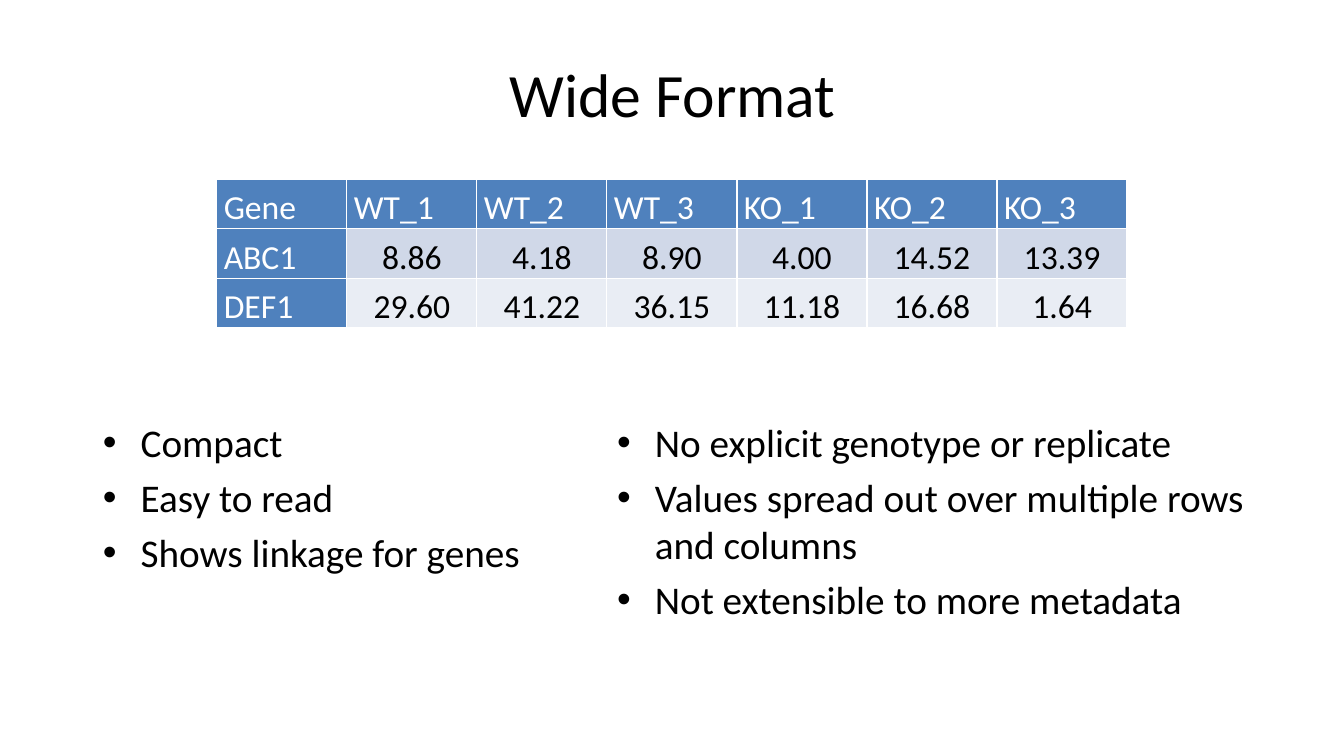
import dataclasses

import pptx
import pptx.dml.color
import pptx.enum.text
import pptx.oxml
import pptx.oxml.ns
import pptx.util
from pptx.util import Inches


@dataclasses.dataclass(frozen=True)
class Theme:
    """Font, colours and type sizes of the slide."""
    font: str = "Calibri"
    ink: str = "000000"
    paper: str = "FFFFFF"
    header: str = "4F81BD"
    bands: tuple = ("D0D8E8", "E9EDF4")
    title_size: int = 44
    list_size: int = 28
    table_size: int = 24


THEME = Theme()
ALIGN = pptx.enum.text.PP_ALIGN
ANCHOR = pptx.enum.text.MSO_ANCHOR
EXPRESSION = [
    ["Gene", "WT_1", "WT_2", "WT_3", "KO_1", "KO_2", "KO_3"],
    ["ABC1", "8.86", "4.18", "8.90", "4.00", "14.52", "13.39"],
    ["DEF1", "29.60", "41.22", "36.15", "11.18", "16.68", "1.64"],
]
STRENGTHS = ["Compact", "Easy to read", "Shows linkage for genes"]
WEAKNESSES = [
    "No explicit genotype or replicate",
    "Values spread out over multiple rows and columns",
    "Not extensible to more metadata",
]


def rgb(code):
    """Turn a hex code into a colour."""
    return pptx.dml.color.RGBColor.from_string(code)


def add_run(p, text, size, color=THEME.ink):
    """Add one formatted run to a paragraph."""
    r = p.add_run()
    r.text = text
    r.font.name = THEME.font
    r.font.size = pptx.util.Pt(size)
    r.font.bold = False
    r.font.color.rgb = rgb(color)


def fill_placeholder(sp, box, lines, size):
    """Move a placeholder and write one paragraph per line."""
    sp.left, sp.top, sp.width, sp.height = (Inches(v) for v in box)
    tf = sp.text_frame
    tf.auto_size = pptx.enum.text.MSO_AUTO_SIZE.NONE
    for i, line in enumerate(lines):
        p = tf.add_paragraph() if i else tf.paragraphs[0]
        add_run(p, line, size)


def set_borders(cell, color, width):
    """Draw all four borders of a cell."""
    tc_pr = cell._tc.get_or_add_tcPr()
    for i, side in enumerate(("lnL", "lnR", "lnT", "lnB")):
        tc_pr.insert(i, pptx.oxml.parse_xml(
            f'<a:{side} {pptx.oxml.ns.nsdecls("a")} w="{pptx.util.Pt(width)}">'
            f'<a:solidFill><a:srgbClr val="{color}"/></a:solidFill></a:{side}>'))


def format_cell(cell, text, fill, color, align):
    """Fill, border and write one table cell."""
    cell.fill.solid()
    cell.fill.fore_color.rgb = rgb(fill)
    set_borders(cell, THEME.paper, 1)
    cell.margin_left = cell.margin_right = Inches(0.07)
    cell.margin_top = cell.margin_bottom = 0
    cell.vertical_anchor = ANCHOR.BOTTOM
    p = cell.text_frame.paragraphs[0]
    p.alignment = align
    p.line_spacing = 1.2
    add_run(p, text, THEME.table_size, color)


def add_data_table(s, left, top, col_width, row_height, rows):
    """Add a table with a header row and a header column."""
    n_rows, n_cols = len(rows), len(rows[0])
    table = s.shapes.add_table(
        n_rows, n_cols, Inches(left), Inches(top),
        Inches(col_width * n_cols), Inches(row_height * n_rows)).table
    table.first_col = True
    for i, row in enumerate(rows):
        for j, text in enumerate(row):
            if i == 0 or j == 0:
                look = THEME.header, THEME.paper, ALIGN.LEFT
            else:
                look = THEME.bands[(i - 1) % 2], THEME.ink, ALIGN.CENTER
            format_cell(table.cell(i, j), text, *look)


def main():
    """Build and save the slide."""
    prs = pptx.Presentation()
    prs.slide_width, prs.slide_height = Inches(13.33), Inches(7.5)
    s = prs.slides.add_slide(prs.slide_layouts.get_by_name("Two Content"))
    title, strengths, weaknesses = s.placeholders
    fill_placeholder(title, (0.67, 0.3, 12, 1.25), ["Wide Format"], THEME.title_size)
    fill_placeholder(strengths, (0.92, 4.1, 4.78, 1.87), STRENGTHS, THEME.list_size)
    fill_placeholder(weaknesses, (6.02, 4.1, 6.73, 2.41), WEAKNESSES, THEME.list_size)
    add_data_table(s, 2.15, 1.78, 1.29, 0.49, EXPRESSION)
    prs.save("out.pptx")


if __name__ == "__main__":
    main()
